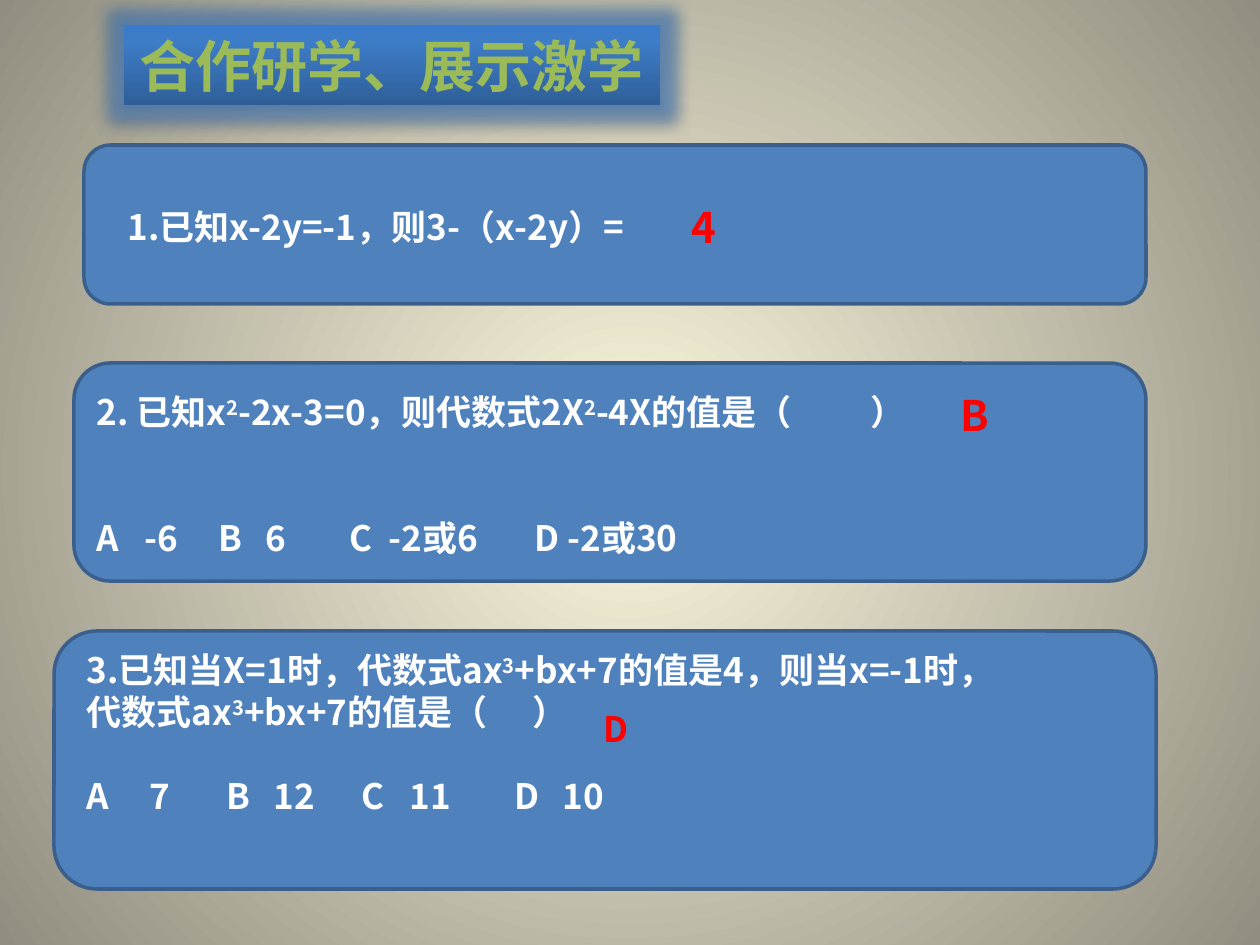
import lxml.etree
import pptx
import pptx.dml.color
import pptx.enum.shapes
import pptx.enum.text
import pptx.oxml
import pptx.oxml.ns
import pptx.util

PX = 914400 / 126
FONT = "Noto Sans CJK SC"
NS = 'xmlns:a="http://schemas.openxmlformats.org/drawingml/2006/main"'
COLORS = {"card": "4F81BD", "border": "3A5F8C", "title": "9BBB59",
          "text": "FFFFFF", "answer": "FF0000"}
qn = pptx.oxml.ns.qn


def format_run(run, size, color):
    run.font.size = pptx.util.Pt(size)
    run.font.bold = True
    run.font.name = FONT
    run.font.color.rgb = pptx.dml.color.RGBColor.from_string(COLORS[color])
    lxml.etree.SubElement(run._r.get_or_add_rPr(), qn("a:ea")).set("typeface", FONT)


def gradient(stops, direction):
    marks = "".join(f'<a:gs pos="{pos * 1000}"><a:srgbClr val="{color}"/></a:gs>'
                    for pos, color in stops)
    return pptx.oxml.parse_xml(
        f'<a:gradFill {NS} rotWithShape="1"><a:gsLst>{marks}</a:gsLst>{direction}</a:gradFill>')


deck = pptx.Presentation()
deck.slide_width, deck.slide_height = round(1260 * PX), round(945 * PX)
slide = deck.slides.add_slide(deck.slide_layouts[5])

slide.background.fill.solid()
backdrop = slide._element.cSld.bg.bgPr
backdrop.replace(backdrop[0], gradient(
    [(0, "FCF7DD"), (100, "918E81")],
    '<a:path path="circle"><a:fillToRect l="50000" t="50000" r="50000" b="50000"/></a:path>'))

title = slide.shapes.title
title.left, title.top, title.width, title.height = [round(v * PX) for v in (124, 25, 536, 80)]
title.fill.solid()
title_look = title._element.spPr
title_look.replace(title_look.find(qn("a:solidFill")), gradient(
    [(0, "2F5F99"), (80, "3D7CC7"), (100, "3A7CCB")], '<a:lin ang="16200000" scaled="0"/>'))
title.shadow.inherit = False
effects = title_look.find(qn("a:effectLst"))
effects.append(pptx.oxml.parse_xml(
    f'<a:glow {NS} rad="228600"><a:srgbClr val="{COLORS["card"]}">'
    '<a:alpha val="70000"/></a:srgbClr></a:glow>'))
effects.append(pptx.oxml.parse_xml(
    f'<a:outerShdw {NS} blurRad="39370" dist="22860" dir="5400000" rotWithShape="0">'
    '<a:srgbClr val="000000"><a:alpha val="35000"/></a:srgbClr></a:outerShdw>'))
title.text_frame.text = "合作研学、展示激学"
title.text_frame.word_wrap = False
title.text_frame.vertical_anchor = pptx.enum.text.MSO_ANCHOR.MIDDLE
title.text_frame.paragraphs[0].alignment = pptx.enum.text.PP_ALIGN.CENTER
format_run(title.text_frame.paragraphs[0].runs[0], 32, "title")

# Each line: text with ^superscripts^, space before in points, tab stops in px.
questions = [
    ((84, 145, 1062, 159), (115, 199, 554, 55),
     [("1.已知x-2y=-1，则3-（x-2y）=", 0, [])]),
    ((74, 363, 1072, 218), (84, 383, 848, 183),
     [("2. 已知x^2^-2x-3=0，则代数式2X^2^-4X的值是（\t）", 0, [774]),
      ("A\t-6\tB\t6\tC\t-2或6\tD -2或30", 48, [48, 122, 169, 253, 292, 438])]),
    ((54, 631, 1102, 258), (74, 641, 1000, 183),
     [("3.已知当X=1时，代数式ax^3^+bx+7的值是4，则当x=-1时，", 0, []),
      ("代数式ax^3^+bx+7的值是（\t）", 0, [446]),
      ("A\t7\tB\t12\tC\t11\tD\t10", 24, [63, 140, 187, 275, 323, 428, 476])]),
]
for card_box, text_box, lines in questions:
    card = slide.shapes.add_shape(pptx.enum.shapes.MSO_SHAPE.ROUNDED_RECTANGLE,
                                  *[round(v * PX) for v in card_box])
    card.shadow.inherit = False
    card.fill.solid()
    card.fill.fore_color.rgb = pptx.dml.color.RGBColor.from_string(COLORS["card"])
    card.line.color.rgb = pptx.dml.color.RGBColor.from_string(COLORS["border"])
    card.line.width = pptx.util.Pt(2)

    question = slide.shapes.add_textbox(*[round(v * PX) for v in text_box]).text_frame
    question.word_wrap = True
    question.vertical_anchor = pptx.enum.text.MSO_ANCHOR.MIDDLE
    for number, (text, gap, stops) in enumerate(lines):
        line = question.add_paragraph() if number else question.paragraphs[0]
        line.space_before = pptx.util.Pt(gap)
        if stops:
            tabs = lxml.etree.SubElement(line._p.get_or_add_pPr(), qn("a:tabLst"))
            for stop in stops:
                lxml.etree.SubElement(tabs, qn("a:tab"), pos=str(round(stop * PX)), algn="l")
        for index, part in enumerate(text.split("^")):
            run = line.add_run()
            run.text = part
            format_run(run, 20, "text")
            if index % 2:
                run._r.get_or_add_rPr().set("baseline", "30000")

answers = [("4", (679, 195, 228, 63), 24),
           ("B", (948, 383, 129, 63), 24),
           ("D", (591, 701, 100, 55), 20)]
for letter, box, size in answers:
    answer = slide.shapes.add_textbox(*[round(v * PX) for v in box]).text_frame
    answer.word_wrap = True
    answer.text = letter
    format_run(answer.paragraphs[0].runs[0], size, "answer")

deck.save("out.pptx")
